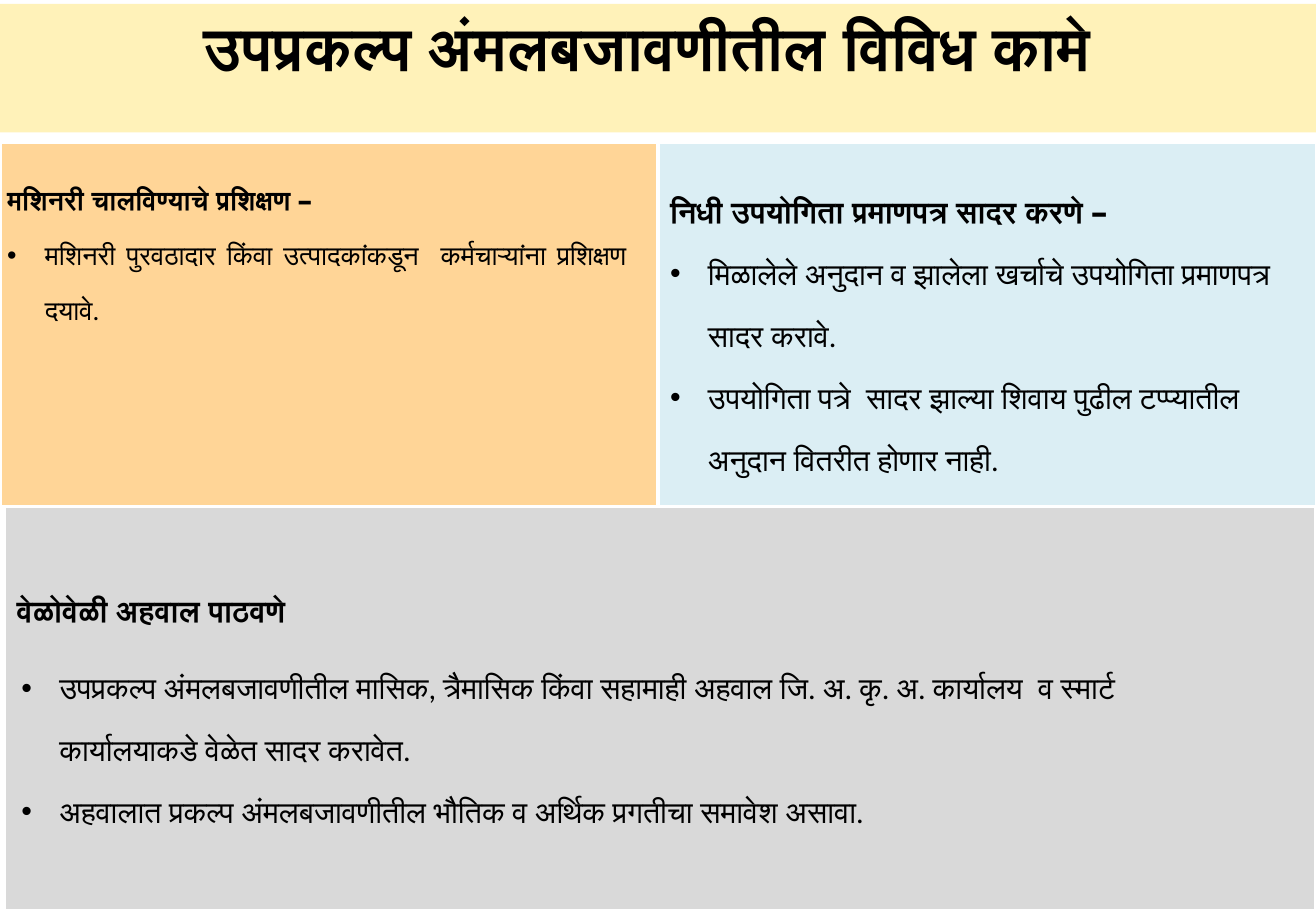
from lxml import etree
from pptx import Presentation
from pptx.dml.color import RGBColor
from pptx.enum.shapes import MSO_SHAPE
from pptx.enum.text import MSO_ANCHOR, MSO_AUTO_SIZE, PP_ALIGN
from pptx.oxml.ns import qn
from pptx.util import Cm, Pt

RECTANGLE = MSO_SHAPE.RECTANGLE
TOP = MSO_ANCHOR.TOP
GROW = MSO_AUTO_SIZE.SHAPE_TO_FIT_TEXT
LEFT, CENTER, JUSTIFY = PP_ALIGN.LEFT, PP_ALIGN.CENTER, PP_ALIGN.JUSTIFY

WIDTH, HEIGHT = 27.51, 19.05
COLUMN = WIDTH / 2
UPPER_TOP, UPPER_HEIGHT = 2.97, 7.62
LOWER_TOP = UPPER_TOP + UPPER_HEIGHT
EDGE = 0.1
INDENT = 0.79

PANELS = [
    ("D9D9D9", (EDGE, LOWER_TOP, WIDTH - EDGE, HEIGHT - LOWER_TOP)),
    ("FFD597", (0, UPPER_TOP, COLUMN, UPPER_HEIGHT)),
    ("DBEEF4", (COLUMN, UPPER_TOP, COLUMN, UPPER_HEIGHT)),
]
TITLE = "उपप्रकल्प अंमलबजावणीतील विविध कामे "
TITLE_PLACE = (-EDGE, 0.08, WIDTH + EDGE, 2.69)
TEXTS = [
    {"place": (-EDGE, 3.25, 13.44, 3.73), "size": 16, "align": JUSTIFY, "wrap": True,
     "heading": "मशिनरी चालविण्याचे प्रशिक्षण –",
     "bullets": ["मशिनरी पुरवठादार किंवा उत्पादकांकडून  कर्मचाऱ्यांना प्रशिक्षण दयावे. "]},
    {"place": (COLUMN, 3.38, 13.13, 6.65), "size": 18, "align": LEFT, "wrap": True,
     "heading": "निधी उपयोगिता प्रमाणपत्र सादर करणे –",
     "bullets": ["मिळालेले अनुदान व झालेला खर्चाचे उपयोगिता प्रमाणपत्र सादर करावे.",
                 "उपयोगिता पत्रे  सादर झाल्या शिवाय पुढील टप्प्यातील अनुदान वितरीत होणार नाही."]},
    {"place": (EDGE, 11.73, 6.93, 1.57), "size": 18, "align": LEFT, "wrap": False,
     "heading": "वेळोवेळी अहवाल पाठवणे", "bullets": []},
    {"place": (0.2, 13.34, 26.37, 4.19), "size": 18, "align": LEFT, "wrap": True,
     "heading": None,
     "bullets": ["उपप्रकल्प अंमलबजावणीतील मासिक, त्रैमासिक किंवा सहामाही अहवाल जि. अ. कृ. अ. "
                 "कार्यालय  व स्मार्ट कार्यालयाकडे वेळेत सादर करावेत.",
                 "अहवालात प्रकल्प अंमलबजावणीतील भौतिक व अर्थिक प्रगतीचा समावेश असावा."]},
]


def color(value):
    return RGBColor.from_string(value)


def lengths(place):
    return [Cm(round(value, 2)) for value in place]


def add_panel(page, fill, place):
    panel = page.shapes.add_shape(RECTANGLE, *lengths(place))
    panel.shadow.inherit = False
    panel.fill.solid()
    panel.fill.fore_color.rgb = color(fill)
    return panel


def write(para, text, size, bold, align):
    para.alignment = align
    span = para.add_run()
    span.text = text
    for name, value in {"name": "Calibri", "size": Pt(size), "bold": bold}.items():
        setattr(span.font, name, value)
    span.font.color.rgb = color("000000")


def add_bullet(para):
    props = para._p.get_or_add_pPr()
    props.set("marL", str(Cm(INDENT)))
    props.set("indent", str(-Cm(INDENT)))
    etree.SubElement(props, qn("a:buFont")).set("typeface", "Arial")
    etree.SubElement(props, qn("a:buChar")).set("char", "•")


def add_text(page, text):
    box = page.shapes.add_textbox(*lengths(text["place"]))
    frame = box.text_frame
    for name, value in {"word_wrap": text["wrap"], "auto_size": GROW}.items():
        setattr(frame, name, value)
    lines = [(text["heading"], True)] if text["heading"] else []
    lines += [(line, False) for line in text["bullets"]]
    for index, (line, heading) in enumerate(lines):
        para = frame.add_paragraph() if index else frame.paragraphs[0]
        para.line_spacing = 1.7
        write(para, line, text["size"], heading, LEFT if heading else text["align"])
        if not heading:
            add_bullet(para)


def main():
    deck = Presentation()
    deck.slide_width, deck.slide_height = Cm(WIDTH), Cm(HEIGHT)
    page = deck.slides.add_slide(deck.slide_layouts[6])
    for fill, place in PANELS:
        panel = add_panel(page, fill, place)
        panel.line.color.rgb = color("FFFFFF")
        panel.line.width = Pt(2)
    title = add_panel(page, "FFF2B9", TITLE_PLACE)
    title.line.fill.background()
    title.text_frame.vertical_anchor = TOP
    title.text_frame.word_wrap = True
    write(title.text_frame.paragraphs[0], TITLE, 36, True, CENTER)
    for text in TEXTS:
        add_text(page, text)
    deck.save("out.pptx")


if __name__ == "__main__":
    main()
